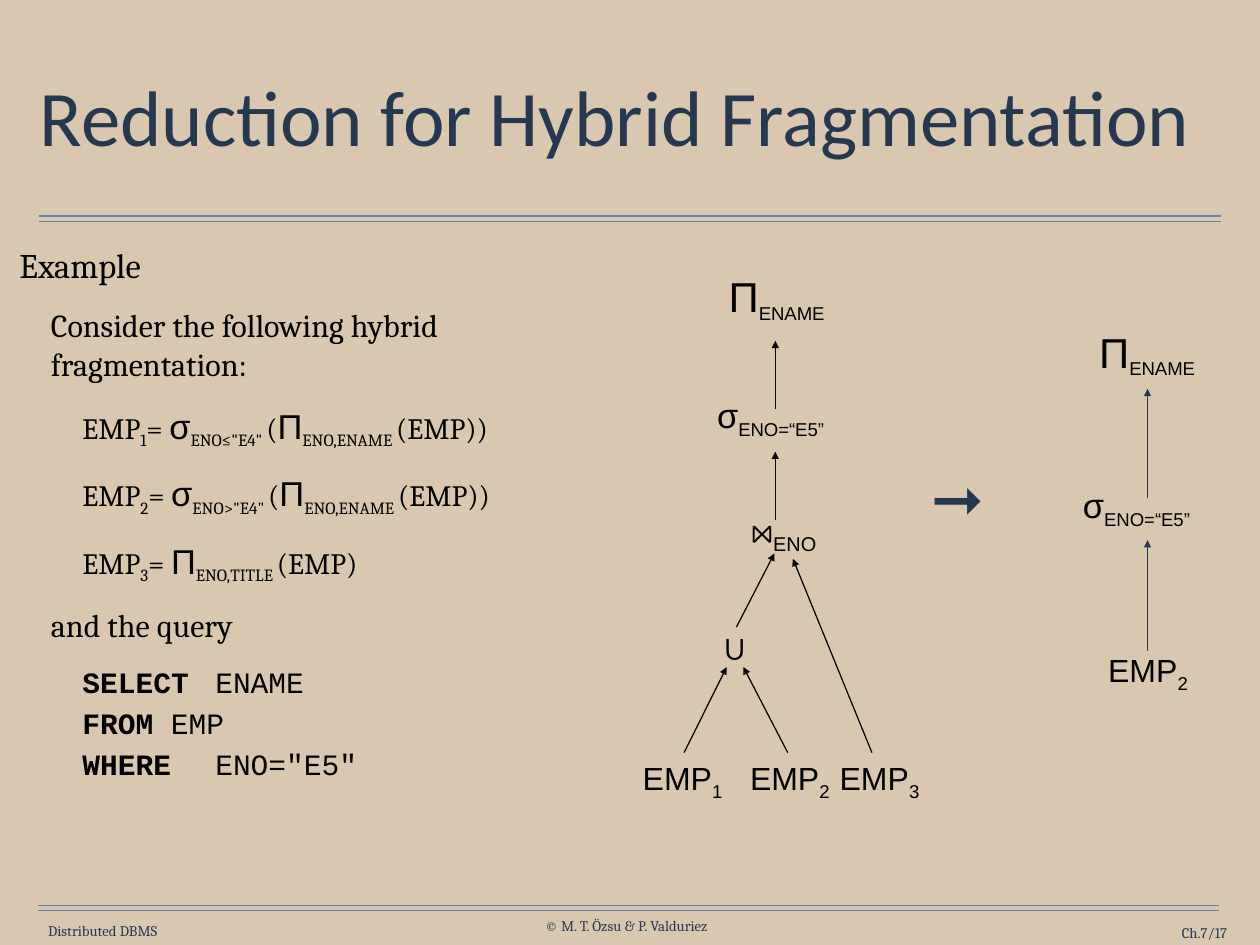
import collections

import lxml.etree
import pptx
import pptx.dml.color
import pptx.enum.shapes
import pptx.enum.text
import pptx.oxml.ns
import pptx.util

WIDTH, HEIGHT = 14.22, 10.67
SAND, NAVY, STEEL, BLACK = "D9C8AF", "263750", "6682AA", "000000"
ALIGN = pptx.enum.text.PP_ALIGN
ANCHOR = pptx.enum.text.MSO_ANCHOR

Box = collections.namedtuple("Box", "left top width height")
Span = collections.namedtuple("Span", "text size name sub bold", defaults=(None, None, False, None))
Node = collections.namedtuple("Node", "x y width size spans")


def inches(value):
    return pptx.util.Inches(value)


def colour(code):
    return pptx.dml.color.RGBColor.from_string(code)


def sub(text, size=None, name=None):
    return Span(text, size, name, sub=True)


def point(box, x, y):
    """Turn percentages of a box into inches on the slide."""
    return box.left + box.width * x / 100, box.top + box.height * y / 100


def add_xml(parent, tag, **attributes):
    return lxml.etree.SubElement(parent, pptx.oxml.ns.qn(tag), attributes)


def add_box(page, box, margins, wrap=True, anchor=ANCHOR.TOP):
    frame = page.shapes.add_textbox(*map(inches, box)).text_frame
    frame.word_wrap = wrap
    frame.vertical_anchor = anchor
    frame.margin_left = frame.margin_right = inches(margins[0])
    frame.margin_top = frame.margin_bottom = inches(margins[1])
    return frame


def write(para, spans, size, name="Cambria", code=BLACK, align=ALIGN.LEFT):
    para.alignment = align
    para.font.size = pptx.util.Pt(size)
    para.font.name = name
    para.font.color.rgb = colour(code)
    for part in spans:
        span = para.add_run()
        span.text = part.text
        if part.size:
            span.font.size = pptx.util.Pt(part.size)
        if part.name:
            span.font.name = part.name
        if part.bold:
            span.font.bold = True
        if part.sub:
            span.font._element.set("baseline", "-25000")


def add_line(page, start, end, code, arrow=False):
    line = page.shapes.add_connector(
        pptx.enum.shapes.MSO_CONNECTOR.STRAIGHT, *map(inches, (*start, *end)))
    line.line.color.rgb = colour(code)
    line.line.width = pptx.util.Pt(1)
    if arrow:
        add_xml(line.line._get_or_add_ln(), "a:tailEnd", type="triangle")
    add_xml(line._element.spPr, "a:effectLst")


def add_double_rule(page, box):
    for top in (box.top, box.top + box.height):
        add_line(page, (box.left, top), (box.left + box.width, top), STEEL)


def add_title(page, box):
    para = add_box(page, box, (0.06, 0.06), anchor=ANCHOR.MIDDLE).paragraphs[0]
    para.line_spacing = 0.9
    write(para, [Span("Reduction for Hybrid Fragmentation")], 64, "Calibri", NAVY)


def add_footer(page, box):
    add_double_rule(page, Box(box.left, box.top, box.width, 0.06))
    entries = [
        ("Distributed DBMS", 0.04, 0.19, 1.38, ALIGN.CENTER),
        ("© M. T. Özsu & P. Valduriez", 5.6, 0.13, 2.08, ALIGN.CENTER),
        ("Ch.7/17", 11.88, 0.21, 1.54, ALIGN.RIGHT),
    ]
    for text, x, y, width, align in entries:
        place = Box(box.left + x, box.top + y, width, 0.2)
        frame = add_box(page, place, (0, 0), align == ALIGN.RIGHT, ANCHOR.MIDDLE)
        write(frame.paragraphs[0], [Span(text)], 12, code=NAVY, align=align)


def add_example(page, box):
    sigma, project = Span("σ", 28, "Arial"), Span("Π", 28, "Arial")

    def selection(number, condition):
        return [Span("EMP"), sub(number), Span("= "), sigma, sub(condition), Span("("),
                project, sub("ENO,ENAME "), Span("(EMP))")]

    def clause(keyword, rest):
        return [Span(keyword, bold=True), Span("\t" + rest)]

    courier = "Courier New"
    rows = [  # level, space before in percent, size, font, spans
        (0, 0, 28, "Cambria", [Span("Example")]),
        (1, 65, 26, "Cambria", [Span("Consider the following hybrid fragmentation:")]),
        (2, 65, 24, "Cambria", selection("1", "ENO≤\"E4\" ")),
        (2, 65, 24, "Cambria", selection("2", "ENO>\"E4\" ")),
        (2, 65, 24, "Cambria", [Span("EMP"), sub("3"), Span("= "), project,
                                sub("ENO,TITLE "), Span("(EMP)")]),
        (1, 65, 26, "Cambria", [Span("and the query")]),
        (2, 65, 24, courier, clause("SELECT", "ENAME")),
        (2, 20, 24, courier, clause("FROM", "EMP")),
        (2, 20, 24, courier, clause("WHERE", "ENO=\"E5\"")),
    ]
    frame = add_box(page, box, (0.06, 0.06))
    for index, (level, space, size, name, spans) in enumerate(rows):
        para = frame.add_paragraph() if index else frame.paragraphs[0]
        para.level = level
        properties = para._p.get_or_add_pPr()
        properties.set("marL", str(inches(0.355 * level)))
        properties.set("indent", "0")
        if space:
            before = add_xml(properties, "a:spcBef")
            add_xml(before, "a:spcPct", val=str(space * 1000))
        write(para, spans, size, name)


def add_node(page, box, node, code=BLACK):
    """Centre a label on a point given in percent of the box."""
    x, y = point(box, node.x, node.y)
    height = node.size * 1.2 / 72 + 0.14
    place = Box(x - node.width / 2, y - height / 2, node.width, height)
    frame = add_box(page, place, (0.14, 0.07), wrap=False)
    write(frame.paragraphs[0], node.spans, node.size, "Arial", code, ALIGN.CENTER)


def add_tree(page, box, nodes, edges, code):
    for node in nodes:
        add_node(page, box, node)
    for start, end in edges:
        add_line(page, point(box, *start), point(box, *end), code, arrow=True)


def relation(x, y, number):
    return Node(x, y, 1.21, 26, [Span("EMP"), sub(number)])


def select_node(x, y):
    return Node(x, y, 1.65, 28, [Span("σ"), sub("ENO=“E5”", 26)])


def project_node(x, y):
    return Node(x, y, 1.51, 34, [Span("Π"), sub("ENAME", 26)])


def add_query_tree(page, box):
    nodes = [
        project_node(48.5, 5.8),
        select_node(46.5, 27.9),
        Node(50.9, 49.1, 1.23, 28, [Span("⋈", name="Cambria"), sub("ENO")]),
        Node(34.8, 71, 0.59, 28, [Span("∪")]),
        *(relation(x, 95.2, number) for x, number in ((17.6, "1"), (52.9, "2"), (82.4, "3"))),
    ]
    edges = [
        ((18.1, 90.6), (32.1, 74.7)),
        ((52.2, 90.6), (37.6, 74.7)),
        ((79.9, 90.6), (53.9, 54.6)),
        ((35.3, 67.3), (47.8, 53.6)),
        ((48.1, 47.4), (48.1, 34.7)),
        ((48.1, 26.8), (48.1, 14.1)),
    ]
    add_tree(page, box, nodes, edges, BLACK)


def add_reduced_tree(page, box):
    nodes = [project_node(57.3, 8.4), select_node(50, 49.2), relation(57.9, 93.2, "2")]
    edges = [((57.6, 88.2), (57.6, 58.7)), ((57.6, 47.6), (57.6, 18.4))]
    add_tree(page, box, nodes, edges, NAVY)


def main():
    deck = pptx.Presentation()
    deck.slide_width, deck.slide_height = inches(WIDTH), inches(HEIGHT)
    page = deck.slides.add_slide(deck.slide_layouts[6])
    page.background.fill.solid()
    page.background.fill.fore_color.rgb = colour(SAND)
    add_double_rule(page, Box(0.44, 2.44, 13.34, 0.06))
    add_footer(page, Box(0.43, 10.22, 13.33, 0.45))
    add_title(page, Box(0.39, 0.49, 13.44, 1.76))
    add_example(page, Box(0.16, 2.69, 7.11, 6.82))
    add_query_tree(page, Box(7.1, 2.99, 3.43, 6.08))
    add_reduced_tree(page, Box(12, 3.61, 1.65, 4.24))
    add_node(page, Box(10.33, 5.11, 0.95, 1), Node(50, 50, 0.95, 51, [Span("➞")]), NAVY)
    deck.save("out.pptx")


if __name__ == "__main__":
    main()
